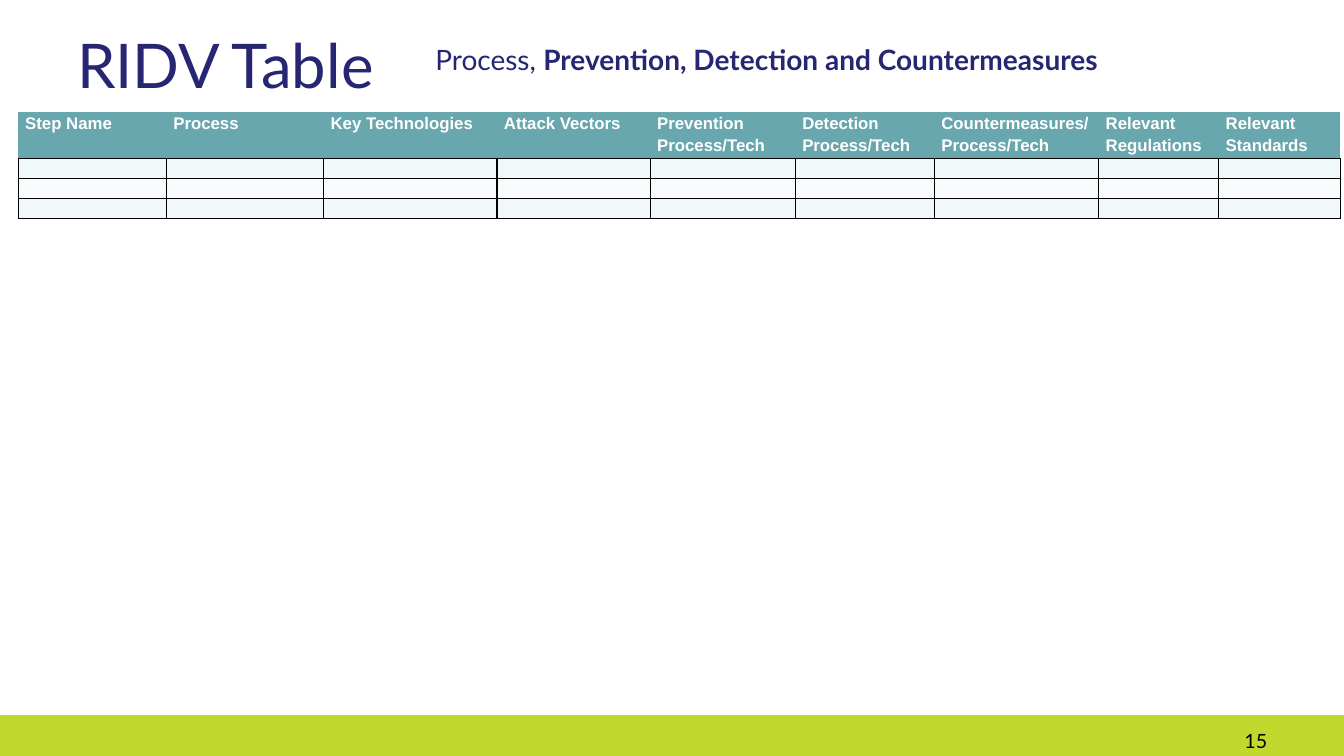
from dataclasses import dataclass

from lxml.etree import SubElement
from pptx import Presentation
from pptx.dml.color import RGBColor
from pptx.enum.shapes import MSO_SHAPE
from pptx.enum.text import MSO_ANCHOR, PP_ALIGN
from pptx.oxml import parse_xml
from pptx.oxml.ns import nsdecls, qn
from pptx.util import Inches, Pt


@dataclass(frozen=True)
class Theme:
    navy: str = "262673"
    lime: str = "C1D82E"
    teal: str = "69A7AE"
    white: str = "FFFFFF"
    black: str = "000000"
    bands: tuple = ("F1F8F9", "F8FCFC")
    text_font: str = "Lato"
    table_font: str = "Arial"
    title_size: int = 44
    subtitle_size: int = 20
    number_size: int = 14
    header_size: int = 12
    empty_size: int = 10


HEADERS = ["Step Name", "Process", "Key Technologies", "Attack Vectors",
           "Prevention Process/Tech", "Detection Process/Tech",
           "Countermeasures/Process/Tech", "Relevant Regulations",
           "Relevant Standards"]
# Shares of the slide's size, in percent
COLUMN_WIDTHS = [11.03, 11.7, 12.9, 11.4, 10.8, 10.35, 12.23, 8.93, 9.05]
ROW_HEIGHTS = [5.6] + [2.67] * 3


class SlideBuilder:
    """Places elements by percent of the slide's width and height."""

    def __init__(self, presentation, theme):
        self.presentation = presentation
        self.theme = theme
        self.slide = presentation.slides.add_slide(presentation.slide_layouts[6])

    def across(self, percent):
        return round(self.presentation.slide_width * percent / 100)

    def down(self, percent):
        return round(self.presentation.slide_height * percent / 100)

    def place(self, left, top, width, height):
        return (self.across(left), self.down(top),
                self.across(width), self.down(height))

    def style(self, font, size, color, name=None, bold=None):
        font.name = name or self.theme.text_font
        font.size = Pt(size)
        font.bold = bold
        font.color.rgb = RGBColor.from_string(color)

    def bar(self, area, color):
        shape = self.slide.shapes.add_shape(MSO_SHAPE.RECTANGLE, *self.place(*area))
        shape.shadow.inherit = False
        shape.fill.solid()
        shape.fill.fore_color.rgb = RGBColor.from_string(color)
        shape.line.fill.background()

    def text(self, area, runs, size, color,
             align=PP_ALIGN.LEFT, anchor=MSO_ANCHOR.TOP):
        frame = self.slide.shapes.add_textbox(*self.place(*area)).text_frame
        frame.word_wrap = True
        frame.vertical_anchor = anchor
        paragraph = frame.paragraphs[0]
        paragraph.alignment = align
        self.style(paragraph.font, size, color)
        for words, bold in runs:
            run = paragraph.add_run()
            run.text = words
            run.font.bold = bold

    def borders(self, cell, visible_sides):
        properties = cell._tc.get_or_add_tcPr()
        for index, side in enumerate("LRTB"):
            paint = "<a:noFill/>"
            if side in visible_sides:
                paint = (f'<a:solidFill><a:srgbClr val="{self.theme.black}"/>'
                         "</a:solidFill>")
            properties.insert(index, parse_xml(
                f'<a:ln{side} {nsdecls("a")} w="{Pt(1)}">{paint}</a:ln{side}>'))

    def cell(self, cell, fill, visible_sides):
        cell.margin_left = cell.margin_right = Inches(0.07)
        cell.margin_top = cell.margin_bottom = 0
        cell.fill.solid()
        cell.fill.fore_color.rgb = RGBColor.from_string(fill)
        self.borders(cell, visible_sides)

    def table(self, left, top, headers, widths, heights):
        theme = self.theme
        area = self.place(left, top, sum(widths), sum(heights))
        table = self.slide.shapes.add_table(len(heights), len(widths), *area).table
        for column, width in zip(table.columns, widths):
            column.width = self.across(width)
        for row, height in zip(table.rows, heights):
            row.height = self.down(height)

        # Header row
        for cell, label in zip(table.rows[0].cells, headers):
            self.cell(cell, theme.teal, "B")
            cell.text = label
            paragraph = cell.text_frame.paragraphs[0]
            paragraph.line_spacing = 1.15
            self.style(paragraph.font, theme.header_size, theme.white,
                       theme.table_font, True)

        # Empty banded rows: the end mark's size keeps them low
        for index in range(1, len(heights)):
            for cell in table.rows[index].cells:
                self.cell(cell, theme.bands[(index - 1) % 2], "LRTB")
                SubElement(cell.text_frame.paragraphs[0]._p, qn("a:endParaRPr"),
                           sz=str(theme.empty_size * 100))


def main():
    presentation = Presentation()
    presentation.slide_width = Inches(13.33)
    presentation.slide_height = Inches(7.5)
    theme = Theme()
    builder = SlideBuilder(presentation, theme)

    # Footer band
    builder.bar((0, 94.6, 100, 5.4), theme.lime)

    # Title and subtitle
    builder.text((5, 0.13, 90, 16.67), [("RIDV Table", None)],
                 theme.title_size, theme.navy, anchor=MSO_ANCHOR.MIDDLE)
    builder.text((31.65, 4.93, 60, 7.2),
                 [("Process, ", None),
                  ("Prevention, Detection and Countermeasures", True)],
                 theme.subtitle_size, theme.navy)

    # Table
    builder.table(1.35, 14.8, HEADERS, COLUMN_WIDTHS, ROW_HEIGHTS)

    # Slide number
    builder.text((71.7, 95.73, 23.33, 4.13), [("15", None)],
                 theme.number_size, theme.black, align=PP_ALIGN.RIGHT)

    presentation.save("out.pptx")


if __name__ == "__main__":
    main()
